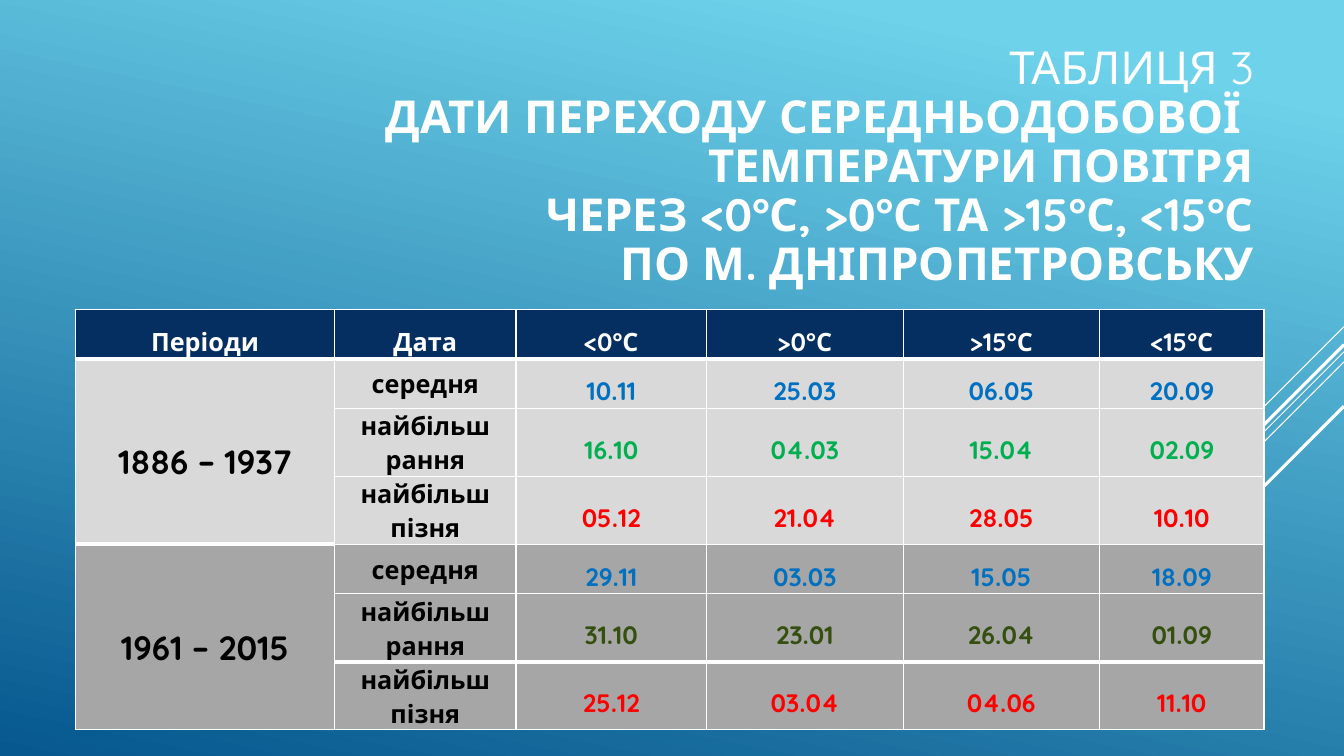
import lxml.etree
import pptx
import pptx.dml.color
import pptx.enum.shapes
import pptx.enum.text
import pptx.oxml.ns
import pptx.util

Pt = pptx.util.Pt
qn = pptx.oxml.ns.qn
FONT = "Quicksand"
WHITE = "FFFFFF"
WIDTH, HEIGHT = 960, 540

TITLE = [
    "ТАБЛИЦЯ 3",
    "ДАТИ ПЕРЕХОДУ СЕРЕДНЬОДОБОВОЇ ",
    "ТЕМПЕРАТУРИ ПОВІТРЯ",
    "ЧЕРЕЗ <0°С, >0°С ТА >15°С, <15°С",
    "ПО М. ДНІПРОПЕТРОВСЬКУ",
]
HEADER = ["Періоди", "Дата", "<0°С", ">0°С", ">15°С", "<15°С"]
DATE_KINDS = ["середня", "найбільш рання", "найбільш пізня"]
PERIODS = [
    ("1886 – 1937", "D9D9D9", ["0070C0", "00B050", "FF0000"], [
        ["10.11", "25.03", "06.05", "20.09"],
        ["16.10", "04.03", "15.04", "02.09"],
        ["05.12", "21.04", "28.05", "10.10"],
    ]),
    ("1961 – 2015", "A6A6A6", ["0070C0", "354F10", "FF0000"], [
        ["29.11", "03.03", "15.05", "18.09"],
        ["31.10", "23.01", "26.04", "01.09"],
        ["25.12", "03.04", "04.06", "11.10"],
    ]),
]
COLUMN_WIDTHS = [185, 129.6, 136.1, 140.4, 140.4, 117.4]
ROW_HEIGHTS = [35.3] + [35.3, 48.6, 48.6] * len(PERIODS)
RAYS = [(233.3, 72, 0.75), (251.3, 234.7, 0.75), (258.5, 149.4, 0.75),
        (246.2, 137.5, 2.25), (290.2, 100.1, 2.25)]


def colour(value):
    return pptx.dml.color.RGBColor.from_string(value)


def style_span(span, size, tint, bold=True):
    span.font.name = FONT
    span.font.size = Pt(size)
    span.font.bold = bold
    span.font.color.rgb = colour(tint)


def paint_background(page):
    fill = page.background.fill
    fill.gradient()
    fill.gradient_angle = 258
    for stop, position, tint in zip(fill.gradient_stops, (0.1, 1), ("6ED2EB", "06588E")):
        stop.position = position
        stop.color.rgb = colour(tint)


def draw_rays(page, right):
    for top, reach, weight in RAYS:
        ray = page.shapes.add_connector(
            pptx.enum.shapes.MSO_CONNECTOR.STRAIGHT,
            Pt(right), Pt(top), Pt(right - reach), Pt(top + reach))
        ray.line.color.rgb = colour(WHITE)
        ray.line.width = Pt(weight)
        lxml.etree.SubElement(ray._element.spPr, qn("a:effectLst"))


def write_title(page, left, top, width, height):
    box = page.shapes.title
    box.left, box.top, box.width, box.height = Pt(left), Pt(top), Pt(width), Pt(height)
    frame = box.text_frame
    frame.auto_size = pptx.enum.text.MSO_AUTO_SIZE.NONE
    frame.word_wrap = True
    frame.vertical_anchor = pptx.enum.text.MSO_ANCHOR.BOTTOM
    frame.margin_bottom = Pt(40)
    para = frame.paragraphs[0]
    para.text = "\n".join(TITLE)
    para.alignment = pptx.enum.text.PP_ALIGN.RIGHT
    para.line_spacing = 0.9
    size = 32.4
    for index, span in enumerate(para.runs):
        style_span(span, size, WHITE, index > 0)
    for line_break in para._p.findall(qn("a:br")):
        lxml.etree.SubElement(line_break, qn("a:rPr"), sz=str(round(size * 100)))


def set_borders(cell, row, column):
    thick_edges = (1, 4) if column == 0 else (1, 6)
    edges = {"lnL": None, "lnR": None, "lnT": row, "lnB": row + cell.span_height}
    properties = cell._tc.get_or_add_tcPr()
    for index, (tag, edge) in enumerate(edges.items()):
        weight = 3 if edge in thick_edges else 1
        line = lxml.etree.Element(qn("a:" + tag), w=str(Pt(weight)))
        solid = lxml.etree.SubElement(line, qn("a:solidFill"))
        lxml.etree.SubElement(solid, qn("a:srgbClr"), val=WHITE)
        properties.insert(index, line)


def fill_cell(cell, text, tint, size=18, spacing=1.5):
    para = cell.text_frame.paragraphs[0]
    para.text = text
    para.alignment = pptx.enum.text.PP_ALIGN.CENTER
    para.line_spacing = spacing
    for span in para.runs:
        style_span(span, size, tint)


def build_table(page, left, top):
    frame = page.shapes.add_table(
        len(ROW_HEIGHTS), len(COLUMN_WIDTHS), Pt(left), Pt(top),
        Pt(sum(COLUMN_WIDTHS)), Pt(sum(ROW_HEIGHTS)))
    table = frame.table
    table.horz_banding = False
    for column, width in zip(table.columns, COLUMN_WIDTHS):
        column.width = Pt(width)
    for row, height in zip(table.rows, ROW_HEIGHTS):
        row.height = Pt(height)

    for column, text in enumerate(HEADER):
        fill_cell(table.cell(0, column), text, WHITE)
    row_fills = ["052F61"]
    for period, fill, tints, dates in PERIODS:
        first = len(row_fills)
        table.cell(first, 0).merge(table.cell(first + len(dates) - 1, 0))
        fill_cell(table.cell(first, 0), period, "000000", size=24)
        for row, (kind, tint, values) in enumerate(zip(DATE_KINDS, tints, dates), first):
            fill_cell(table.cell(row, 1), kind, "000000", spacing=1.07)
            for column, value in enumerate(values, 2):
                fill_cell(table.cell(row, column), value, tint)
            row_fills.append(fill)

    for row, fill in enumerate(row_fills):
        for column in range(len(HEADER)):
            cell = table.cell(row, column)
            cell.vertical_anchor = pptx.enum.text.MSO_ANCHOR.MIDDLE
            cell.margin_left = cell.margin_right = Pt(5)
            cell.margin_top = cell.margin_bottom = Pt(0)
            cell.fill.solid()
            cell.fill.fore_color.rgb = colour(fill)
            set_borders(cell, row, column)


def main():
    deck = pptx.Presentation()
    deck.slide_width, deck.slide_height = Pt(WIDTH), Pt(HEIGHT)
    page = deck.slides.add_slide(deck.slide_layouts[5])
    paint_background(page)
    draw_rays(page, WIDTH)
    write_title(page, 54, 122.4, 848.9, 125.3)
    build_table(page, 54, 221)
    deck.save("out.pptx")


if __name__ == "__main__":
    main()
